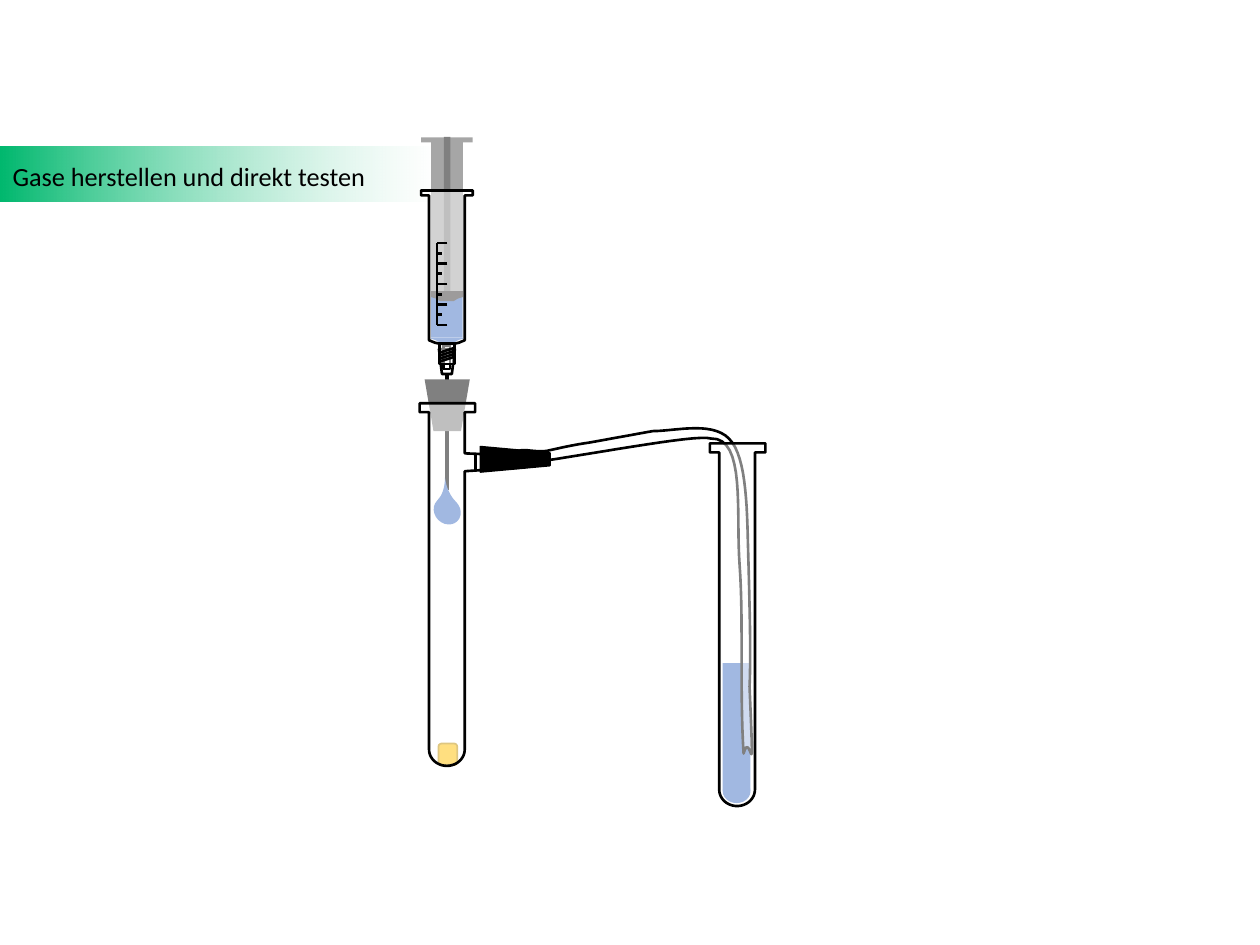
"""Build a slide showing a syringe and two test tubes for making and testing gases."""
from dataclasses import dataclass
from math import cos, pi, sin

from lxml.etree import SubElement
from pptx import Presentation
from pptx.dml.color import RGBColor
from pptx.enum.shapes import MSO_CONNECTOR, MSO_SHAPE
from pptx.enum.text import MSO_ANCHOR, MSO_AUTO_SIZE, PP_ALIGN
from pptx.oxml.ns import qn
from pptx.util import Cm, Pt


@dataclass(frozen=True)
class Theme:
    font: str = "Calibri"
    title_size: float = 15
    ink: str = "000000"
    white: str = "FFFFFF"
    green: str = "00B86E"
    liquid: str = "4472C4"
    grey: str = "808080"
    plunger: str = "A6A6A6"
    piston: str = "3B3838"
    solid: str = "FFC000"
    solid_edge: str = "BD8E00"
    glass_alpha: int = 50000
    fade_alpha: int = 42000


T = Theme()
AXIS = 9.01


def add(shapes, kind, geom, fill=None, line=None, width=1.5, alpha=None, rot=0):
    if kind is None:
        pts = [(Cm(x), Cm(y)) for x, y in geom]
        fb = shapes.build_freeform(*pts[0])
        fb.add_line_segments(pts[1:], close=True)
        sp = fb.convert_to_shape()
    else:
        sp = shapes.add_shape(kind, *map(Cm, geom))
    sp.shadow.inherit = False
    sp.rotation = rot
    if fill:
        sp.fill.solid()
        sp.fill.fore_color.rgb = RGBColor.from_string(fill)
    else:
        sp.fill.background()
    if alpha:
        clr = sp.element.spPr.find(qn("a:solidFill"))[0]
        SubElement(clr, qn("a:alpha")).set("val", str(alpha))
    if line:
        sp.line.color.rgb = RGBColor.from_string(line)
        sp.line.width = Pt(width)
    else:
        sp.line.fill.background()
    return sp


def stroke(shapes, x1, y1, x2, y2, width=1.5):
    c = shapes.add_connector(MSO_CONNECTOR.STRAIGHT, Cm(x1), Cm(y1), Cm(x2), Cm(y2))
    c.line.color.rgb = RGBColor.from_string(T.ink)
    c.line.width = Pt(width)
    SubElement(c.element.spPr, qn("a:effectLst"))


prs = Presentation()
prs.slide_width, prs.slide_height = Cm(25.4), Cm(19.05)
s = prs.slides.add_slide(prs.slide_layouts[5])
glass = dict(fill=T.white, line=T.ink, alpha=T.glass_alpha)

bar = add(s.shapes, MSO_SHAPE.RECTANGLE, (0, 2.95, 8.74, 1.12))
bar.fill.gradient()
bar.fill.gradient_angle = 0
for stop, colour in zip(bar.fill.gradient_stops, (T.green, T.white)):
    stop.color.rgb = RGBColor.from_string(colour)
fade = bar.element.spPr.findall(".//" + qn("a:srgbClr"))[-1]
SubElement(fade, qn("a:alpha")).set("val", str(T.fade_alpha))

title = s.shapes.title
title.left, title.top, title.width, title.height = Cm(0), Cm(3.1), Cm(7.7), Cm(0.89)
bar.element.addnext(title.element)
tf = title.text_frame
tf.text = "Gase herstellen und direkt testen"
tf.word_wrap = False
tf.auto_size = MSO_AUTO_SIZE.SHAPE_TO_FIT_TEXT
tf.vertical_anchor = MSO_ANCHOR.MIDDLE
p = tf.paragraphs[0]
p.alignment = PP_ALIGN.LEFT
p.font.name, p.font.size = T.font, Pt(T.title_size)
p.font.color.rgb = RGBColor.from_string(T.ink)

half_outlines = {
    "funnel": [(0.16, 7.04), (0.1, 7.54)],
    "tip": [(0.32, 6.81), (0.32, 6.83), (0.22, 6.86), (0.14, 6.91)],
    "plunger": [(0.52, 2.77), (0.52, 2.87), (0.32, 2.87), (0.32, 5.87)],
    "piston": [(0.32, 5.87), (0.32, 5.99), (0.22, 6.02), (0.14, 6.07)],
    "barrel": [(0.52, 3.84), (0.52, 3.94), (0.36, 3.94), (0.36, 6.86), (0.24, 6.91), (0.15, 6.93)],
}
outlines = {
    name: [(AXIS + x, y) for x, y in half] + [(AXIS - x, y) for x, y in reversed(half)]
    for name, half in half_outlines.items()
}

needle = s.shapes.add_group_shape().shapes
add(needle, None, outlines["funnel"], **glass)
stroke(needle, AXIS, 7.54, AXIS, 9.88, 2.25)

stopper = add(s.shapes, MSO_SHAPE.TRAPEZOID, (8.56, 7.65, 0.91, 1.04), T.grey, rot=180)
stopper.adjustments[0] = 0.195
drop = add(s.shapes, MSO_SHAPE.TEAR, (8.76, 10.01, 0.51, 0.58), T.liquid, rot=314.8)
drop.adjustments[0] = 1.739
add(s.shapes, MSO_SHAPE.ROUNDED_RECTANGLE, (8.84, 14.99, 0.38, 0.43), T.solid, T.solid_edge, 1)

test_liquid = s.shapes.add_group_shape().shapes
add(test_liquid, MSO_SHAPE.OVAL, (14.57, 15.71, 0.56, 0.48), T.liquid)
add(test_liquid, MSO_SHAPE.RECTANGLE, (14.57, 13.37, 0.56, 2.57), T.liquid)

hose_curves = [
    ((15.14, 13.21), (15.11, 12.19), (15.09, 11.4)),
    ((15.06, 10.59), (15.09, 9.37), (14.76, 8.92)),
    ((14.45, 8.46), (13.64, 8.69), (13.16, 8.69)),
    ((13.16, 8.69), (11.89, 8.92), (11.89, 8.92)),
    ((11.53, 8.97), (11.25, 9.04), (11.02, 9.09)),
    ((10.77, 9.12), (10.57, 9.04), (10.46, 9.09)),
    ((10.44, 9.22), (10.44, 9.27), (10.41, 9.37)),
    ((11.76, 9.19), (14.05, 8.74), (14.33, 8.84)),
    ((15.04, 8.81), (14.83, 10.34), (14.91, 11.4)),
    ((14.99, 12.45), (14.91, 14), (14.99, 15.19)),
    ((15.14, 14.63), (15.21, 16.23), (15.11, 13.84)),
]
hose = [(15.11, 13.84)]
for b, c, d in hose_curves:
    a = hose[-1]
    for t in (i / 16 for i in range(1, 17)):
        u = 1 - t
        hose.append(tuple(
            u**3 * a[k] + 3 * u * u * t * b[k] + 3 * u * t * t * c[k] + t**3 * d[k]
            for k in (0, 1)
        ))

glassware = s.shapes.add_group_shape().shapes
add(glassware, None, hose, **glass)
side_arm = [(9.37, 9.5), (10.59, 9.42), (10.59, 9.19), (9.37, 9.14)]
round_base = [(9.01 + 0.36 * cos(i * pi / 24), 15.11 + 0.33 * sin(i * pi / 24)) for i in range(25)]
rim = [(8.65, 8.31), (8.46, 8.31), (8.46, 8.13), (9.58, 8.13), (9.58, 8.31), (9.37, 8.31)]
for dx, dy, arm in ((5.85, 0.81, []), (0, 0, side_arm[::-1])):
    tube = rim + arm + round_base
    add(glassware, None, [(x + dx, y + dy) for x, y in tube], **glass)
for x, top, bottom in ((10.24, 9.19, 9.47), (9.91, 9.17, 9.47), (9.58, 9.14, 9.5)):
    stroke(glassware, x, bottom, x, top)
add(s.shapes, MSO_SHAPE.TRAPEZOID, (10.13, 8.56, 0.51, 1.4), T.ink, T.ink, 1, rot=90)

syringe = s.shapes.add_group_shape().shapes
add(syringe, None, outlines["tip"], T.liquid)
add(syringe, MSO_SHAPE.RECTANGLE, (8.69, 5.87, 0.64, 0.94), T.liquid)
add(syringe, None, outlines["plunger"], T.plunger)
add(syringe, MSO_SHAPE.RECTANGLE, (8.95, 2.76, 0.13, 3.15), T.grey)
add(syringe, None, outlines["piston"], T.piston)
add(syringe, None, outlines["barrel"], **glass)

scale_x, scale_top, scale_bottom = 8.81, 4.9, 6.55
stroke(syringe, scale_x, scale_top, scale_x, scale_bottom)
for i in range(9):
    y = scale_top + i * (scale_bottom - scale_top) / 8
    stroke(syringe, scale_x + (0.1 if i % 2 else 0.21), y, scale_x, y)

add(syringe, MSO_SHAPE.RECTANGLE, (8.94, 6.96, 0.13, 0.48), line=T.ink)
add(syringe, MSO_SHAPE.RECTANGLE, (8.86, 6.93, 0.3, 0.41), **glass)
for i in range(4):
    y = 7.01 + 0.06 * i
    stroke(syringe, 9.17, y, 8.86, y + 0.1)

prs.save("out.pptx")
